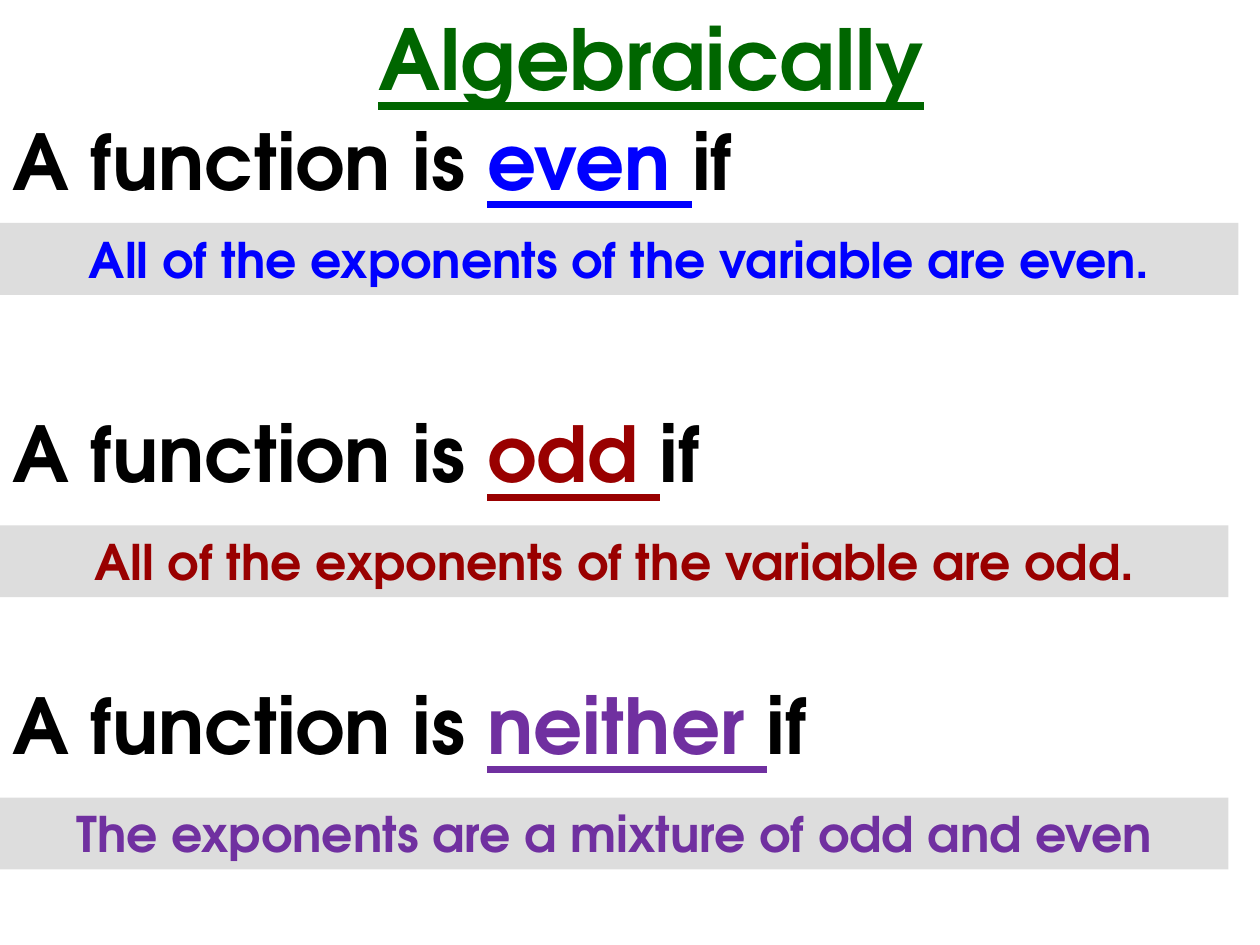
"""Build a slide that tells even, odd and neither functions apart by their exponents."""
import pptx
import pptx.dml.color
import pptx.enum.shapes
import pptx.enum.text
import pptx.util

COLORS = {"title": "006600", "text": "000000", "band": "DDDDDD",
          "even": "0000FF", "odd": "990000", "neither": "7030A0"}
FONT = "TeX Gyre Adventor"
WIDTH, HEIGHT = 10, 7.5
TITLE = {"text": "Algebraically", "box": (1.67, 0, 7, 0.9)}
HEADING_SIZE = (9.42, 0.83)
BAND_HEIGHT = 0.57
RULES = [
    {"kind": "even", "test": "All of the exponents of the variable are even.",
     "heading_top": 0.85, "band_top": 1.77, "band_width": 9.83},
    {"kind": "odd", "test": "All of the exponents of the variable are odd.",
     "heading_top": 3.17, "band_top": 4.17, "band_width": 9.75},
    {"kind": "neither", "test": "The exponents are a mixture of odd and even",
     "heading_top": 5.33, "band_top": 6.33, "band_width": 9.75},
]


def rgb(name):
    return pptx.dml.color.RGBColor.from_string(COLORS[name])


def write(sp, runs, size, align):
    tf = sp.text_frame
    tf.word_wrap = True
    tf.vertical_anchor = pptx.enum.text.MSO_ANCHOR.TOP
    p = tf.paragraphs[0]
    p.alignment = align
    for text, color, underline in runs:
        r = p.add_run()
        r.text = text
        style = {"name": FONT, "size": pptx.util.Pt(size), "bold": True, "underline": underline}
        for key, value in style.items():
            setattr(r.font, key, value)
        r.font.color.rgb = rgb(color)


def add_text(s, box, runs, size, align):
    sp = s.shapes.add_textbox(*map(pptx.util.Inches, box))
    write(sp, runs, size, align)


def add_band(s, box, runs, size, align):
    sp = s.shapes.add_shape(pptx.enum.shapes.MSO_SHAPE.RECTANGLE, *map(pptx.util.Inches, box))
    sp.shadow.inherit = False
    sp.fill.solid()
    sp.fill.fore_color.rgb = rgb("band")
    sp.line.fill.background()
    write(sp, runs, size, align)


def main():
    prs = pptx.Presentation()
    prs.slide_width, prs.slide_height = pptx.util.Inches(WIDTH), pptx.util.Inches(HEIGHT)
    s = prs.slides.add_slide(prs.slide_layouts[6])
    left, center = pptx.enum.text.PP_ALIGN.LEFT, pptx.enum.text.PP_ALIGN.CENTER
    add_text(s, TITLE["box"], [(TITLE["text"], "title", True)], 48, center)
    for rule in RULES:
        kind = rule["kind"]
        heading = [("A function is ", "text", False), (f"{kind} ", kind, True), ("if", "text", False)]
        add_text(s, (0, rule["heading_top"], *HEADING_SIZE), heading, 44, left)
        band = (0, rule["band_top"], rule["band_width"], BAND_HEIGHT)
        add_band(s, band, [(rule["test"], kind, False)], 28, center)
    prs.save("out.pptx")


if __name__ == "__main__":
    main()
